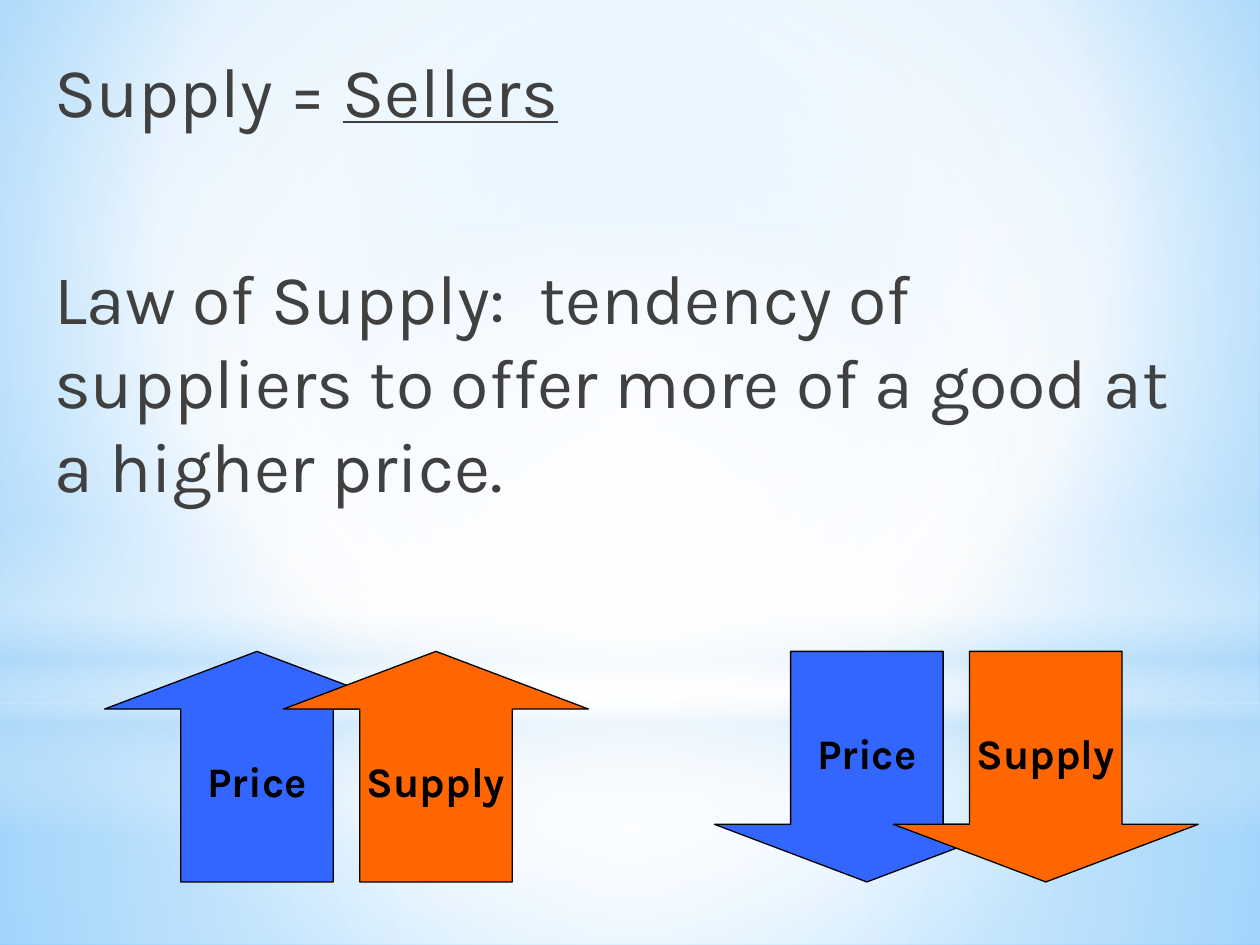
from pptx import Presentation
from pptx.dml.color import RGBColor
from pptx.enum.shapes import MSO_SHAPE
from pptx.enum.text import MSO_ANCHOR, MSO_AUTO_SIZE, PP_ALIGN
from pptx.oxml import parse_xml
from pptx.oxml.ns import nsdecls
from pptx.util import Inches, Pt

FONT = "Karla"
WHITE = RGBColor(0xFF, 0xFF, 0xFF)
PALE_BLUE = RGBColor(0xB4, 0xDC, 0xFA)
SKY_BLUE = RGBColor(0x9E, 0xD5, 0xFF)
DEEP_SKY = RGBColor(0x5B, 0xB9, 0xFF)
GRAY = RGBColor(0x40, 0x40, 0x40)
BLACK = RGBColor(0, 0, 0)
BLUE = RGBColor(0x33, 0x66, 0xFF)
ORANGE = RGBColor(0xFF, 0x66, 0x00)
CENTER = (50, 50, 50, 50)


def gradient_fill(stops, focus=None):
    """Return a circular gradient around focus, or a vertical one without it."""
    stop_xml = "".join(
        f'<a:gs pos="{position * 1000}"><a:srgbClr val="{color}">'
        f'<a:alpha val="{opacity * 1000}"/></a:srgbClr></a:gs>'
        for position, color, opacity in stops
    )
    direction = '<a:lin ang="5400000" scaled="0"/>'
    if focus:
        left, top, right, bottom = (value * 1000 for value in focus)
        direction = (
            f'<a:path path="circle"><a:fillToRect l="{left}" t="{top}" '
            f'r="{right}" b="{bottom}"/></a:path>'
        )
    return parse_xml(
        f'<a:gradFill {nsdecls("a")} rotWithShape="1">'
        f"<a:gsLst>{stop_xml}</a:gsLst>{direction}</a:gradFill>"
    )


def add_glow(slide, kind, top, height, stops, focus=None):
    """Add a full-width translucent gradient shape."""
    shape = slide.shapes.add_shape(kind, 0, top, Inches(10), height)
    shape.shadow.inherit = False
    shape.line.fill.background()
    shape.fill.solid()
    properties = shape.element.spPr
    solid = properties.find("{*}solidFill")
    properties.replace(solid, gradient_fill(stops, focus))


def add_backdrop(slide):
    """Paint the sky gradient and the soft horizon glows."""
    fill = slide.background.fill
    fill.solid()
    properties = slide.element.find(".//{*}bgPr")
    sky = [(0, SKY_BLUE, 100), (60, WHITE, 100), (100, DEEP_SKY, 100)]
    properties.replace(
        properties.find("{*}solidFill"), gradient_fill(sky, (20, 10, 20, 60))
    )
    ground = [(0, WHITE, 91), (37, WHITE, 76), (100, PALE_BLUE, 79)]
    air = [(0, WHITE, 89), (48, WHITE, 62), (100, PALE_BLUE, 79)]
    horizon = [
        (0, WHITE, 0), (29, WHITE, 30), (45, PALE_BLUE, 40),
        (55, WHITE, 26), (65, PALE_BLUE, 60), (100, WHITE, 0),
    ]
    halo = [(0, WHITE, 100), (56, WHITE, 0)]
    rectangle = MSO_SHAPE.RECTANGLE
    add_glow(slide, rectangle, Inches(5.58), Inches(1.92), ground, CENTER)
    add_glow(slide, rectangle, 0, Inches(5.58), air, CENTER)
    add_glow(slide, rectangle, Inches(4.12), Inches(2.5), horizon)
    add_glow(slide, MSO_SHAPE.OVAL, Inches(1.75), Inches(5.58), halo, CENTER)


def add_run(paragraph, text, size, color):
    """Append a run in the slide font and return its font."""
    run = paragraph.add_run()
    run.text = text
    run.font.name = FONT
    run.font.size = Pt(size)
    run.font.color.rgb = color
    return run.font


def fill_body(slide, left, top, width, height):
    """Write the definitions in the body placeholder."""
    body = slide.placeholders[1]
    body.left, body.top, body.width, body.height = left, top, width, height
    frame = body.text_frame
    frame.auto_size = MSO_AUTO_SIZE.NONE
    definition = frame.paragraphs[0]
    add_run(definition, "Supply = ", 40, GRAY)
    add_run(definition, "Sellers", 40, GRAY).underline = True
    law = frame.add_paragraph()
    add_run(
        law,
        "Law of Supply:  tendency of suppliers to offer more of a good at a higher price.",
        40,
        GRAY,
    )
    for paragraph, space in ((definition, 4), (law, 70)):
        paragraph.space_before = Pt(space)
        properties = paragraph._p.get_or_add_pPr()
        properties.set("marL", "0")
        properties.set("indent", "0")
        properties.append(parse_xml(f'<a:buNone {nsdecls("a")}/>'))


def add_arrow_pair(slide, kind, left, top, width, height):
    """Add overlapping price and supply arrows pointing the same way."""
    step = Inches(1.42)
    for index, (label, color) in enumerate((("Price", BLUE), ("Supply", ORANGE))):
        arrow = slide.shapes.add_shape(
            kind, left + index * step, top, width - step, height
        )
        arrow.shadow.inherit = False
        arrow.adjustments[0] = 0.5
        arrow.adjustments[1] = 0.25
        arrow.fill.solid()
        arrow.fill.fore_color.rgb = color
        arrow.line.color.rgb = BLACK
        arrow.line.width = Pt(0.75)
        frame = arrow.text_frame
        frame.word_wrap = False
        frame.vertical_anchor = MSO_ANCHOR.MIDDLE
        paragraph = frame.paragraphs[0]
        paragraph.alignment = PP_ALIGN.CENTER
        add_run(paragraph, label, 24, BLACK).bold = True


def main():
    """Build and save the supply slide."""
    presentation = Presentation()
    presentation.slide_width = Inches(10)
    presentation.slide_height = Inches(7.5)
    slide = presentation.slides.add_slide(presentation.slide_layouts[1])
    title = slide.shapes.title.element
    title.getparent().remove(title)
    add_backdrop(slide)
    body = slide.placeholders[1].element
    body.getparent().append(body)
    fill_body(slide, Inches(0.33), Inches(0.33), Inches(9.42), Inches(6.75))
    for kind, left in ((MSO_SHAPE.UP_ARROW, 0.83), (MSO_SHAPE.DOWN_ARROW, 5.67)):
        add_arrow_pair(
            slide, kind, Inches(left), Inches(5.17), Inches(3.84), Inches(1.83)
        )


    presentation.save("out.pptx")


if __name__ == "__main__":
    main()
